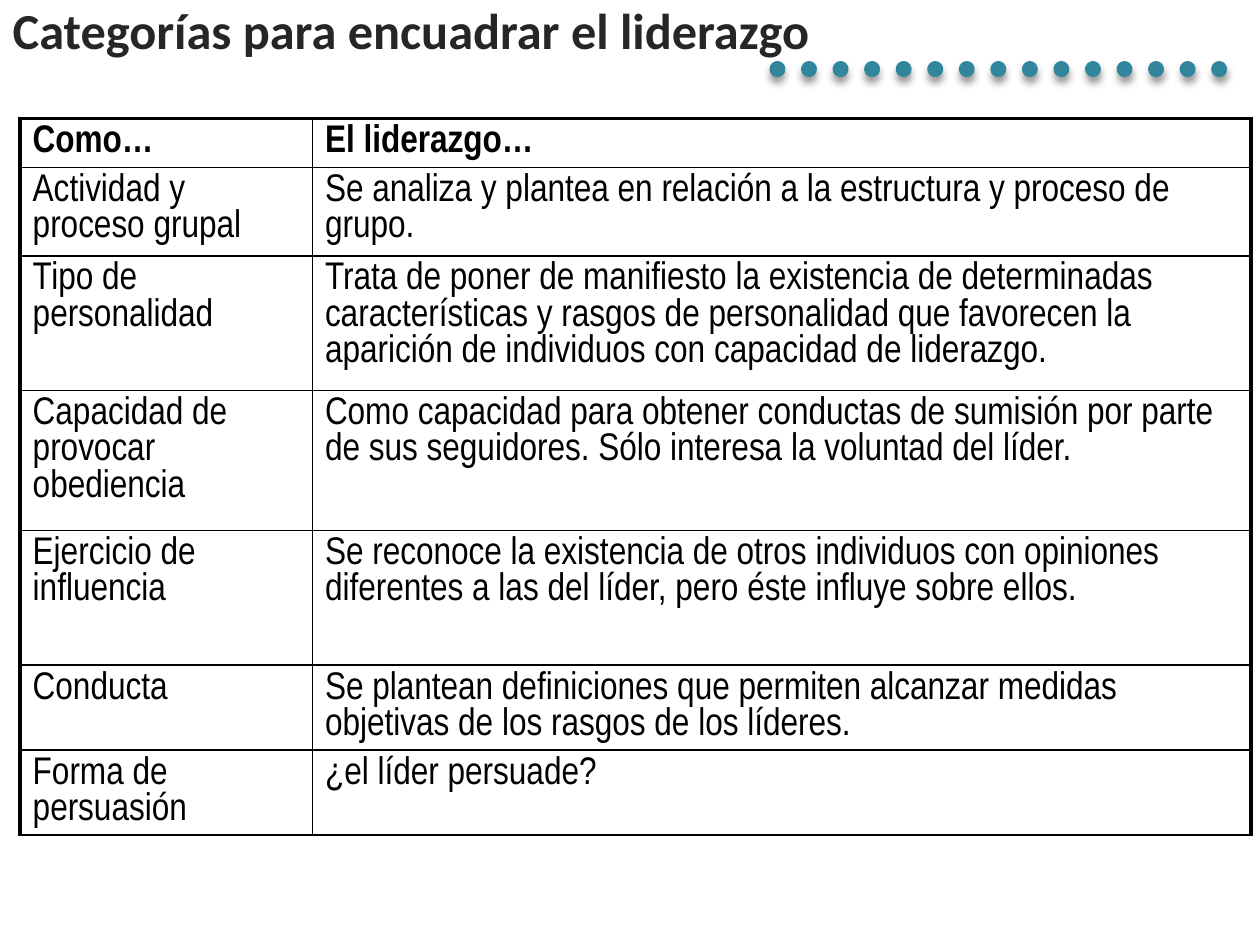
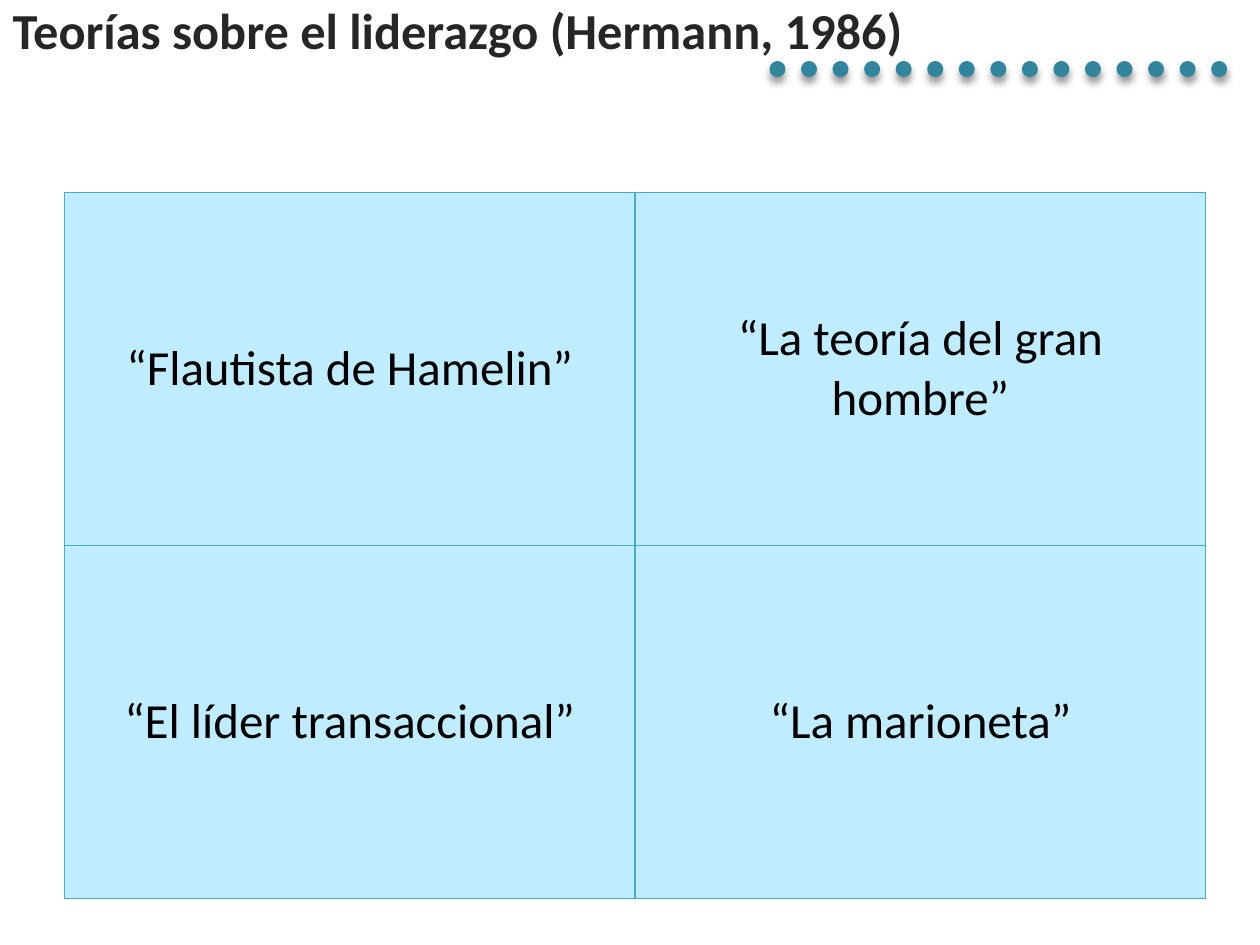
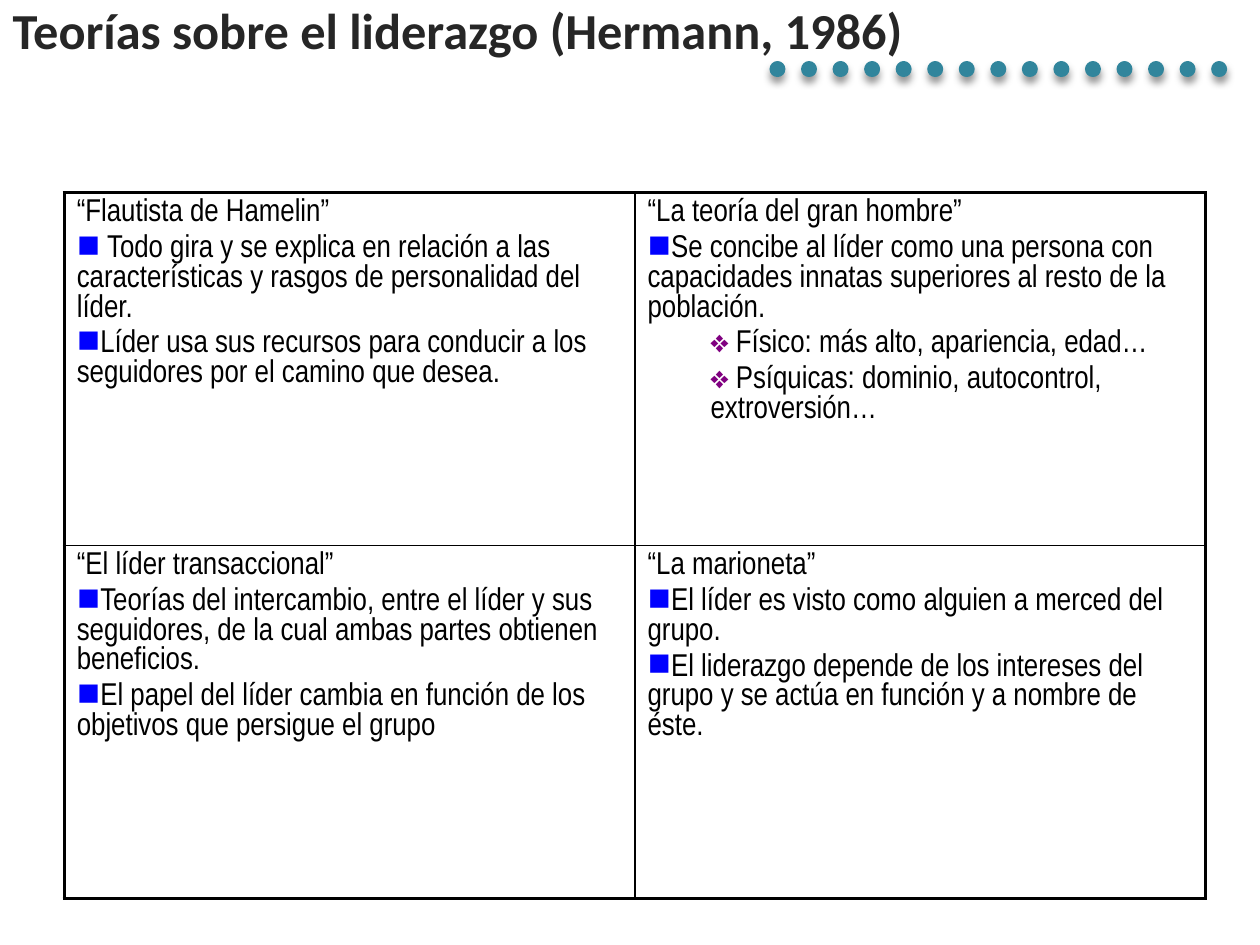
import lxml.etree
import pptx
import pptx.dml.color
import pptx.enum.dml
import pptx.enum.shapes
import pptx.enum.text
import pptx.oxml.ns
import pptx.util

Inches = pptx.util.Inches
Pt = pptx.util.Pt
RGBColor = pptx.dml.color.RGBColor
ALIGN = pptx.enum.text.PP_ALIGN
ANCHOR = pptx.enum.text.MSO_ANCHOR

BLACK = RGBColor(0x00, 0x00, 0x00)
WHITE = RGBColor(0xFF, 0xFF, 0xFF)
INK = RGBColor(0x26, 0x26, 0x26)
TEAL = RGBColor(0x31, 0x85, 0x9C)
AQUA = RGBColor(0x46, 0xAA, 0xC5)
SKY = RGBColor(0xBF, 0xEC, 0xFF)
BLUE = RGBColor(0x00, 0x00, 0xFF)
PLUM = RGBColor(0x80, 0x00, 0x80)
MARKS = {"■": BLUE, "❖": PLUM}


def add(parent, tag, **attrs):
    return lxml.etree.SubElement(parent, pptx.oxml.ns.qn(tag), attrs)


def grid(slide, left, top, cols, rows, cells, face, size, edges, line, fill, mid=False):
    outer, inner, foot = edges
    frame = slide.shapes.add_table(
        len(rows), len(cols), Inches(left), Inches(top), Inches(sum(cols)), Inches(sum(rows)))
    table = frame.table
    table.first_row = table.horz_banding = False
    for col, width in zip(table.columns, cols):
        col.width = Inches(width)
    for row, height in zip(table.rows, rows):
        row.height = Inches(height)
    for r, texts in enumerate(cells):
        for c, text in enumerate(texts):
            cell = table.cell(r, c)
            props = cell._tc.get_or_add_tcPr()
            sides = {
                "a:lnL": outer if c == 0 else inner,
                "a:lnR": outer if c == len(cols) - 1 else inner,
                "a:lnT": outer if r == 0 else inner,
                "a:lnB": foot if r == len(rows) - 1 else inner,
            }
            for tag, width in sides.items():
                side = add(props, tag, w=str(Pt(width)))
                add(add(side, "a:solidFill"), "a:srgbClr", val=str(line))
            cell.fill.solid()
            cell.fill.fore_color.rgb = fill
            cell.vertical_anchor = ANCHOR.MIDDLE if mid else ANCHOR.TOP
            frame = cell.text_frame
            for i, part in enumerate(text.split("\n")):
                para = frame.add_paragraph() if i else frame.paragraphs[0]
                mark = part[0] if part[0] in MARKS else ""
                para.text = part[len(mark):]
                para.alignment = ALIGN.CENTER if mid else ALIGN.LEFT
                if i:
                    para.space_before = Pt(size * 0.2)
                if mark:
                    ppr = para._p.get_or_add_pPr()
                    if mark == "❖":
                        para.level = 1
                        ppr.set("marL", str(Inches(0.5)))
                        ppr.set("indent", "0")
                    add(add(ppr, "a:buClr"), "a:srgbClr", val=str(MARKS[mark]))
                    add(ppr, "a:buChar", char=mark)
                para.font.name = face
                para.font.size = Pt(size)
                para.font.color.rgb = BLACK
                para.font.bold = r == 0 and len(rows) > 2


deck = pptx.Presentation()
deck.slide_width = Inches(10)
deck.slide_height = Inches(7.5)
layout = deck.slide_layouts[5]

slides = []
for name in ["Categorías para encuadrar el liderazgo"] + ["Teorías sobre el liderazgo (Hermann, 1986)"] * 2:
    slide = deck.slides.add_slide(layout)
    title = slide.shapes.title
    title.left = title.top = 0
    title.width, title.height = Inches(9), Inches(0.47)
    title.text_frame.text = name
    title.text_frame.vertical_anchor = ANCHOR.MIDDLE
    para = title.text_frame.paragraphs[0]
    para.alignment = ALIGN.LEFT
    para.font.name = "Calibri"
    para.font.size = Pt(28.8)
    para.font.bold = True
    para.font.color.rgb = INK
    slides.append(slide)

dots = slides[0].shapes.add_connector(
    pptx.enum.shapes.MSO_CONNECTOR.STRAIGHT, Inches(6.17), Inches(0.55), Inches(9.92), Inches(0.55))
dots.line.color.rgb = TEAL
dots.line.width = Pt(9)
dots.line.dash_style = pptx.enum.dml.MSO_LINE.ROUND_DOT
props = dots.element.spPr
props.find(pptx.oxml.ns.qn("a:ln")).set("cap", "rnd")
shade = add(add(props, "a:effectLst"), "a:outerShdw", blurRad=str(Pt(4)), dist=str(Pt(3)),
            dir="5400000", rotWithShape="0")
add(add(shade, "a:srgbClr", val=str(BLACK)), "a:alpha", val="40000")
layout.shapes.element.append(dots.element)

FRAMES = [
    ("Como…", "El liderazgo…"),
    ("Actividad y proceso grupal",
     "Se analiza y plantea en relación a la estructura y proceso de grupo."),
    ("Tipo de personalidad",
     "Trata de poner de manifiesto la existencia de determinadas características y rasgos de "
     "personalidad que favorecen la aparición de individuos con capacidad de liderazgo."),
    ("Capacidad de provocar obediencia",
     "Como capacidad para obtener conductas de sumisión por parte de sus seguidores. "
     "Sólo interesa la voluntad del líder."),
    ("Ejercicio de influencia",
     "Se reconoce la existencia de otros individuos con opiniones diferentes a las del líder, "
     "pero éste influye sobre ellos."),
    ("Conducta",
     "Se plantean definiciones que permiten alcanzar medidas objetivas de los rasgos de los líderes."),
    ("Forma de persuasión", "¿el líder persuade?"),
]
grid(slides[0], 0.16, 0.94, [2.32, 7.45], [0.39, 0.7, 1.07, 1.11, 1.07, 0.64, 0.64], FRAMES,
     "Arial Narrow", 22, (2.25, 1, 1), BLACK, WHITE)

NAMES = [
    ("“Flautista de Hamelin”", "“La teoría del gran hombre”"),
    ("“El líder transaccional”", "“La marioneta”"),
]
NOTES = [
    ("■ Todo gira y se explica en relación a las características y rasgos de personalidad del líder.\n"
     "■Líder usa sus recursos para conducir a los seguidores por el camino que desea.",
     "■Se concibe al líder como una persona con capacidades innatas superiores al resto de la población.\n"
     "❖ Físico: más alto, apariencia, edad…\n"
     "❖ Psíquicas: dominio, autocontrol, extroversión…"),
    ("■Teorías del intercambio, entre el líder y sus seguidores, de la cual ambas partes obtienen beneficios.\n"
     "■El papel del líder cambia en función de los objetivos que persigue el grupo",
     "■El líder es visto como alguien a merced del grupo.\n"
     "■El liderazgo depende de los intereses del grupo y se actúa en función y a nombre de éste."),
]
full = [[f"{n}\n{t}" for n, t in zip(*pair)] for pair in zip(NAMES, NOTES)]
square = (0.51, 1.53, [4.53] * 2, [2.8] * 2)
grid(slides[1], *square, NAMES, "Calibri", 28, (0.75, 0.75, 0.75), AQUA, SKY, mid=True)
grid(slides[2], *square, full, "Arial Narrow", 18, (2.25, 1, 2.25), BLACK, WHITE)

deck.save("out.pptx")
